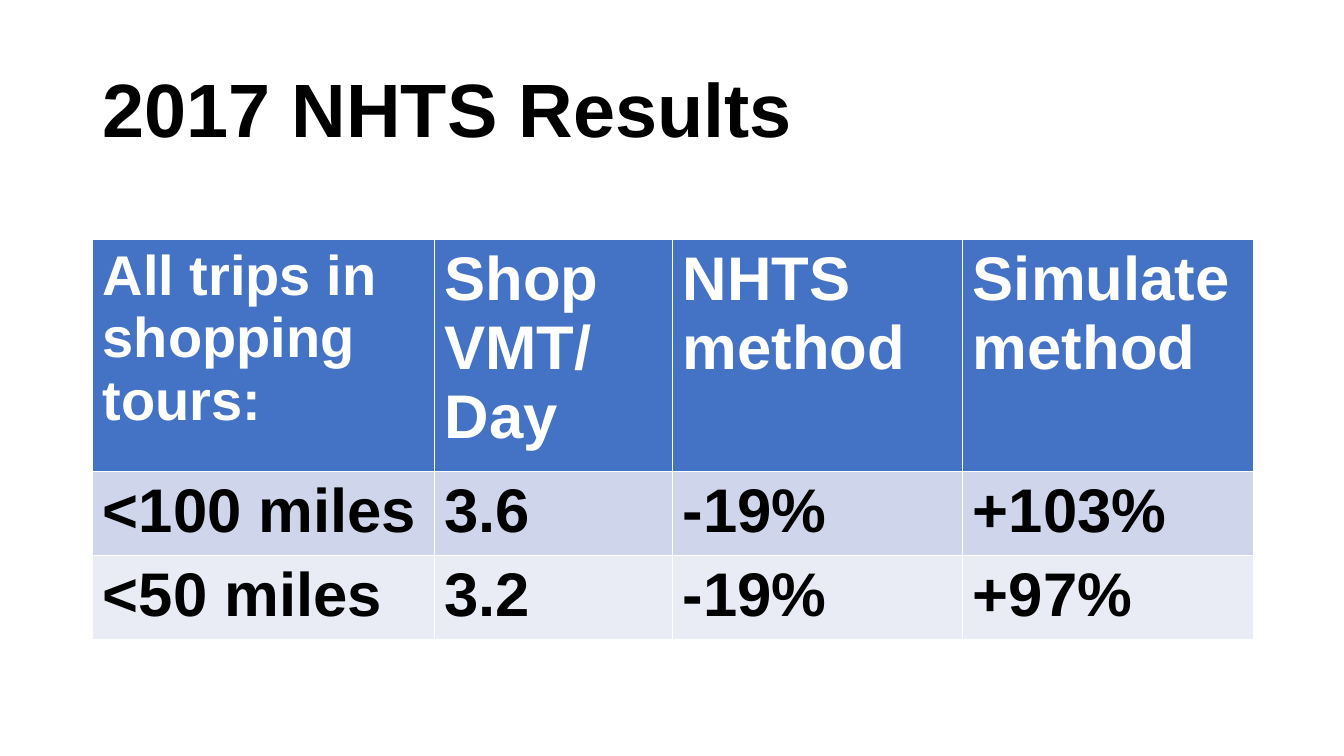
from pptx import Presentation
from pptx.dml.color import RGBColor
from pptx.enum.text import MSO_ANCHOR
from pptx.util import Inches, Pt

LEFT, WIDTH = 0.92, 11.5
COLUMN_WIDTHS = [3.39, 2.36, 2.88, 2.88]
ROW_HEIGHT = 0.41
ROW_FILLS = ["4472C4", "CFD5EA", "E9EBF5"]
RESULTS = [
    ["All trips in shopping tours:", "Shop VMT/\nDay", "NHTS method", "Simulate method"],
    ["<100 miles", "3.6", "-19%", "+103%"],
    ["<50 miles", "3.2", "-19%", "+97%"],
]


def color(value):
    return RGBColor.from_string(value)


def write(frame, text, size, font_color):
    frame.text = text
    for paragraph in frame.paragraphs:
        for span in paragraph.runs:
            span.font.name = "Arial"
            span.font.size = Pt(size)
            span.font.bold = True
            span.font.color.rgb = color(font_color)


deck = Presentation()
deck.slide_width = Inches(13.33)
deck.slide_height = Inches(7.5)
page = deck.slides.add_slide(deck.slide_layouts[6])

title = page.shapes.add_textbox(Inches(LEFT), Inches(0.4), Inches(WIDTH), Inches(1.45))
title.text_frame.word_wrap = True
title.text_frame.vertical_anchor = MSO_ANCHOR.MIDDLE
write(title.text_frame, "2017 NHTS Results", 54, "000000")
title.text_frame.paragraphs[0].line_spacing = 0.9

table = page.shapes.add_table(
    len(RESULTS), len(COLUMN_WIDTHS),
    Inches(LEFT), Inches(2.38), Inches(WIDTH), Inches(ROW_HEIGHT * len(RESULTS)),
).table
for column, width in zip(table.columns, COLUMN_WIDTHS):
    column.width = Inches(width)

for row_index, (row, texts, fill) in enumerate(zip(table.rows, RESULTS, ROW_FILLS)):
    row.height = Inches(ROW_HEIGHT)
    for column_index, (cell, text) in enumerate(zip(row.cells, texts)):
        cell.fill.solid()
        cell.fill.fore_color.rgb = color(fill)
        size = 40 if row_index == column_index == 0 else 44
        write(cell.text_frame, text, size, "FFFFFF" if row_index == 0 else "000000")

deck.save("out.pptx")
